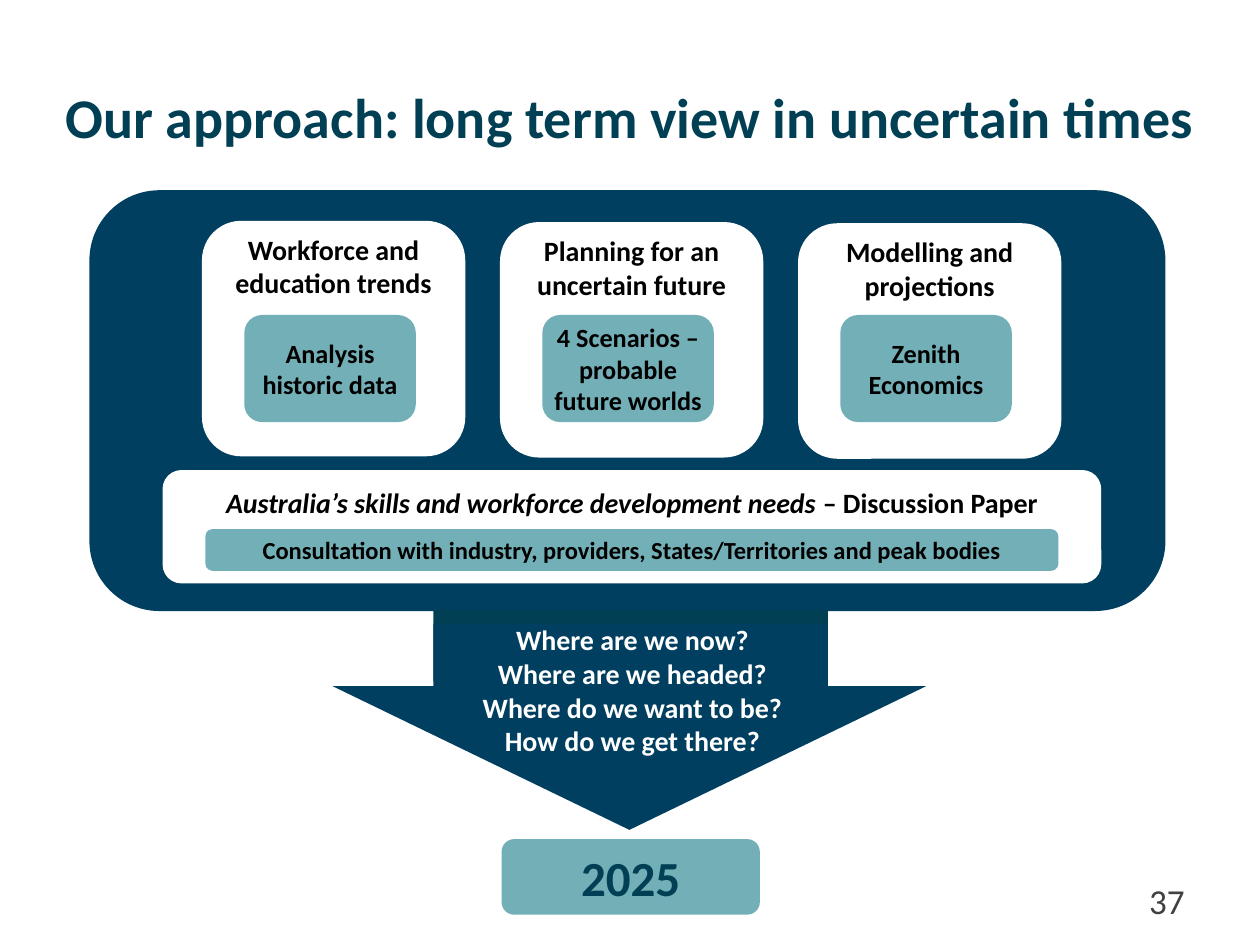
from dataclasses import dataclass

from pptx import Presentation
from pptx.dml.color import RGBColor
from pptx.enum.shapes import MSO_SHAPE
from pptx.enum.text import MSO_ANCHOR, PP_ALIGN
from pptx.shapes.autoshape import Shape
from pptx.slide import Slide
from pptx.util import Pt

ROUNDED = MSO_SHAPE.ROUNDED_RECTANGLE
RECTANGLE = MSO_SHAPE.RECTANGLE
TRIANGLE = MSO_SHAPE.ISOSCELES_TRIANGLE
TOP, MIDDLE = MSO_ANCHOR.TOP, MSO_ANCHOR.MIDDLE
CENTER, RIGHT = PP_ALIGN.CENTER, PP_ALIGN.RIGHT

NAVY, DEEP_TEAL, TEAL = "003F5F", "003F54", "73AFB6"
WHITE, BLACK, GREY = "FFFFFF", "000000", "404040"
NO_INSETS = (0, 0, 0, 0)
CARD_INSETS = (7.2, 0, 7.2, 0)
DEFAULT_INSETS = (7.2, 3.6, 7.2, 3.6)


@dataclass(frozen=True)
class Box:
    left: float
    top: float
    width: float
    height: float


@dataclass(frozen=True)
class TextStyle:
    size: float
    color: str = BLACK
    bold: bool = True
    align: PP_ALIGN = CENTER
    anchor: MSO_ANCHOR = MIDDLE
    insets: tuple[float, float, float, float] = DEFAULT_INSETS


@dataclass(frozen=True)
class Stream:
    heading: str
    method: str


STREAMS = (
    Stream("Workforce and education trends", "Analysis historic data"),
    Stream("Planning for an uncertain future", "4 Scenarios – probable future worlds"),
    Stream("Modelling and projections", "Zenith Economics"),
)
STREAM_PITCH = 170.3
CARD_DROP = 0.7
QUESTIONS = (
    "Where are we now?",
    "Where are we headed?",
    "Where do we want to be?",
    "How do we get there?",
)
CARD_STYLE = TextStyle(16, anchor=TOP, insets=CARD_INSETS)
METHOD_STYLE = TextStyle(15, insets=NO_INSETS)
PAPER_STYLE = TextStyle(16, anchor=TOP, insets=(7.2, 5.8, 7.2, 3.6))


def rgb(color: str) -> RGBColor:
    return RGBColor.from_string(color)


def lengths(box: Box) -> tuple[Pt, Pt, Pt, Pt]:
    return Pt(box.left), Pt(box.top), Pt(box.width), Pt(box.height)


def write_text(shape: Shape, text: str, style: TextStyle) -> None:
    frame = shape.text_frame
    frame.text = text
    frame.word_wrap = True
    frame.vertical_anchor = style.anchor
    left, top, right, bottom = style.insets
    frame.margin_left, frame.margin_top = Pt(left), Pt(top)
    frame.margin_right, frame.margin_bottom = Pt(right), Pt(bottom)
    for paragraph in frame.paragraphs:
        paragraph.alignment = style.align
        for run in paragraph.runs:
            format_run(run, style)


def format_run(run, style: TextStyle) -> None:
    run.font.name = "Calibri"
    run.font.size = Pt(style.size)
    run.font.bold = style.bold
    run.font.color.rgb = rgb(style.color)


def add_block(slide: Slide, kind: MSO_SHAPE, box: Box, fill: str) -> Shape:
    shape = slide.shapes.add_shape(kind, *lengths(box))
    shape.shadow.inherit = False
    shape.fill.solid()
    shape.fill.fore_color.rgb = rgb(fill)
    shape.line.fill.background()
    return shape


def add_panel(slide: Slide, box: Box, fill: str, text: str, style: TextStyle) -> Shape:
    panel = add_block(slide, ROUNDED, box, fill)
    write_text(panel, text, style)
    return panel


def add_label(slide: Slide, box: Box, text: str, style: TextStyle) -> None:
    write_text(slide.shapes.add_textbox(*lengths(box)), text, style)


def add_streams(slide: Slide) -> None:
    for index, stream in enumerate(STREAMS):
        offset = index * STREAM_PITCH
        card = Box(115.4 + offset, 126.2 + index * CARD_DROP, 150.5, 134.6)
        add_panel(slide, card, WHITE, stream.heading, CARD_STYLE)
        method = Box(139.6 + offset, 180, 98, 61.2)
        add_panel(slide, method, TEAL, stream.method, METHOD_STYLE)


def add_discussion_paper(slide: Slide) -> None:
    title = "Australia’s skills and workforce development needs "
    panel = add_panel(slide, Box(92.9, 268.6, 536.4, 64.8), WHITE, title, PAPER_STYLE)
    paragraph = panel.text_frame.paragraphs[0]
    paragraph.runs[0].font.italic = True
    suffix = paragraph.add_run()
    suffix.text = "– Discussion Paper"
    format_run(suffix, PAPER_STYLE)
    add_panel(
        slide,
        Box(117.4, 302.4, 487.4, 23.8),
        TEAL,
        "Consultation with industry, providers, States/Territories and peak bodies",
        TextStyle(14, insets=NO_INSETS),
    )


def add_arrow(slide: Slide) -> None:
    add_block(slide, RECTANGLE, Box(247.7, 348.5, 225.4, 41), DEEP_TEAL)
    add_block(slide, RECTANGLE, Box(247.7, 356.4, 225.4, 38.2), NAVY)
    arrowhead = add_block(slide, TRIANGLE, Box(190.1, 392.1, 339.1, 82.1), NAVY)
    arrowhead.rotation = 180
    questions = "\n".join(QUESTIONS)
    add_label(slide, Box(253.4, 340, 216, 108.6), questions, TextStyle(16, WHITE))


def main() -> None:
    """Build the workforce planning approach slide."""
    presentation = Presentation()
    presentation.slide_width, presentation.slide_height = Pt(720), Pt(540)
    slide = presentation.slides.add_slide(presentation.slide_layouts[6])
    add_label(
        slide,
        Box(18, 21.6, 684, 90),
        "Our approach: long term view in uncertain times",
        TextStyle(32, DEEP_TEAL),
    )
    add_block(slide, ROUNDED, Box(51.1, 108.7, 614.9, 240.5), NAVY)
    add_streams(slide)
    add_discussion_paper(slide)
    add_arrow(slide)
    goal = Box(286.6, 479.5, 147.6, 43.2)
    add_panel(slide, goal, TEAL, "2025", TextStyle(28, DEEP_TEAL))
    page_style = TextStyle(20, GREY, bold=False, align=RIGHT)
    add_label(slide, Box(643.7, 500.4, 40.3, 28.8), "37", page_style)
    presentation.save("out.pptx")


if __name__ == "__main__":
    main()
